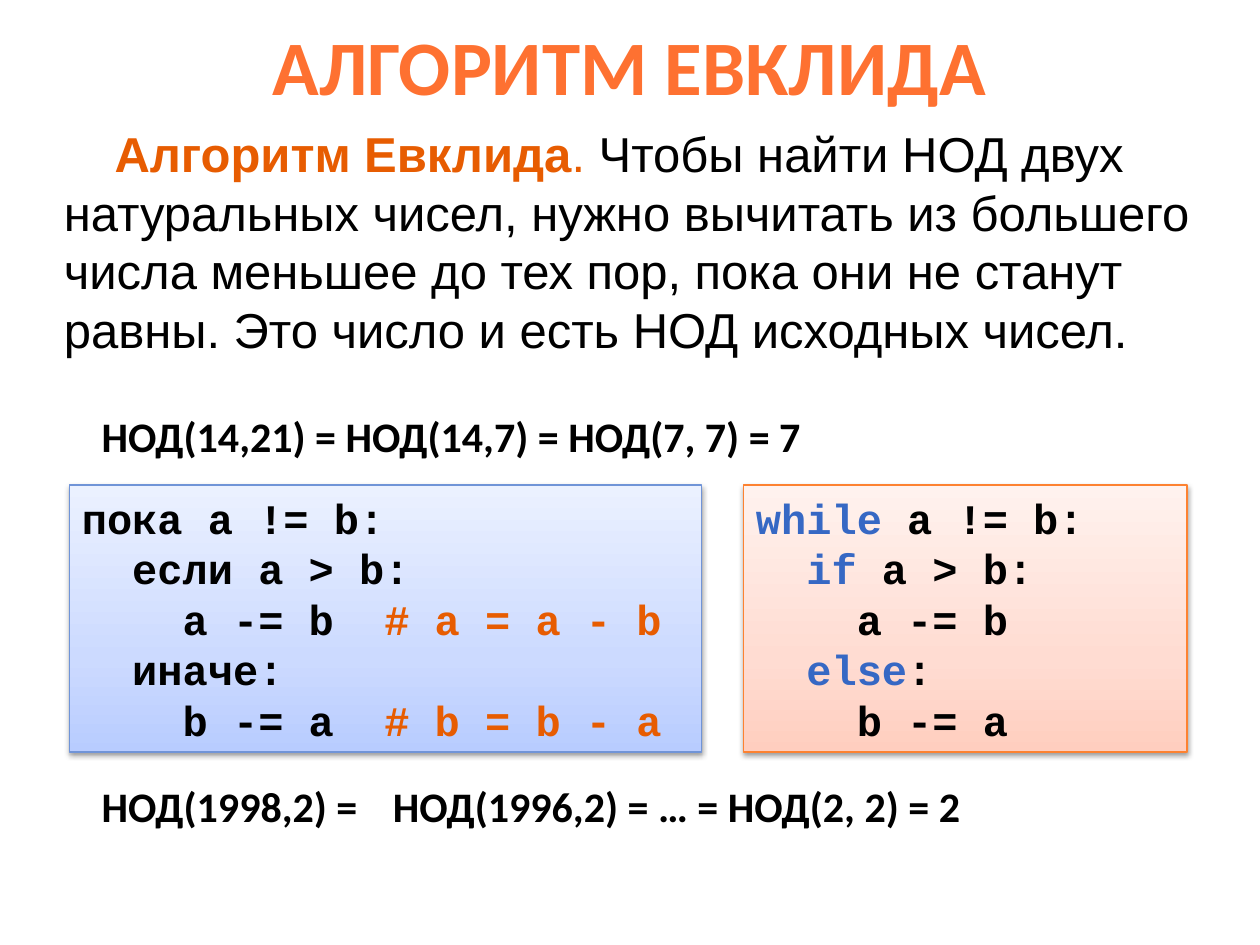
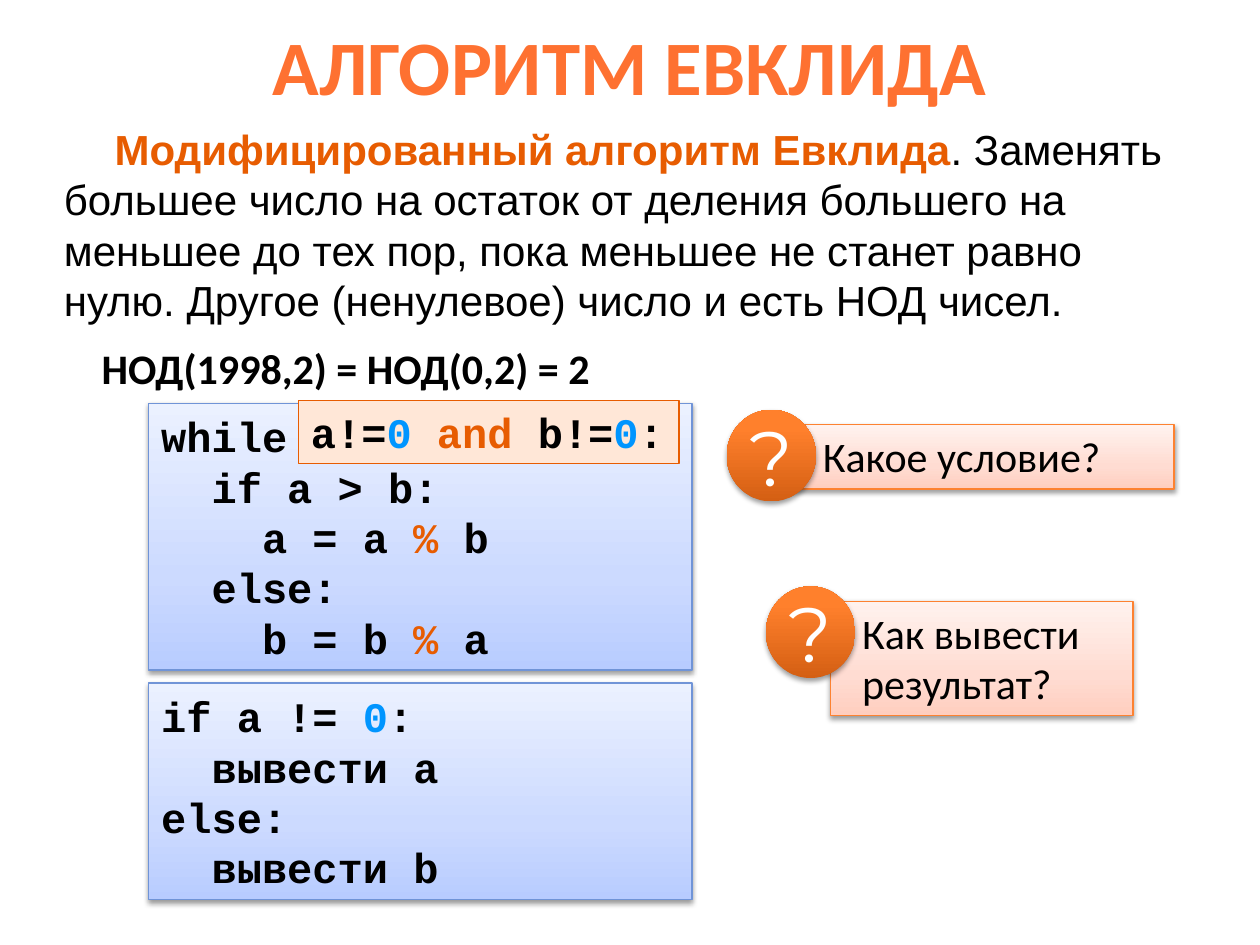
from dataclasses import dataclass

from lxml import etree
from pptx import Presentation
from pptx.dml import color as dml
from pptx.enum import shapes, text
from pptx.oxml import ns
from pptx import util as u


@dataclass(frozen=True)
class Theme:
    """Colours, gradients, fonts and type sizes shared by the slides."""
    title: str = "FE7131"
    ink: str = "000000"
    white: str = "FFFFFF"
    accent: str = "E75C01"
    keyword: str = "3668C4"
    number: str = "0095FF"
    peach: str = "FFE7D7"
    blue_line: str = "7094D7"
    orange_line: str = "FD8231"
    blue: tuple = ((0, "B8CCFF"), (35, "CCDAFF"), (100, "EBF1FF"))
    orange: tuple = ((0, "FFCEBF"), (35, "FFDCD2"), (100, "FFF2EE"))
    badge: tuple = ((0, "D45F13"), (80, "FF802C"), (100, "FF812E"))
    heading_font: str = "Calibri"
    body_font: str = "Arial"
    code_font: str = "Courier New"
    badge_font: str = "Montserrat"
    big: int = 44
    lead: int = 28
    normal: int = 24


THEME = Theme()
RECT, OVAL = shapes.MSO_SHAPE.RECTANGLE, shapes.MSO_SHAPE.OVAL
CENTER = text.PP_ALIGN.CENTER
LEFT = text.PP_ALIGN.LEFT


def rgb(value):
    """Turn a hex string into a colour."""
    return dml.RGBColor.from_string(value)


def accent(words):
    """Mark words with the accent colour."""
    return words, THEME.accent


def keyword(words):
    """Mark words as a code keyword."""
    return words, THEME.keyword


def number(words):
    """Mark words as a code number."""
    return words, THEME.number


def write(box, lines, font, size, bold=False, color=THEME.ink, align=LEFT, middle=False):
    """Fill a box with lines; each line is a string or a list of spans."""
    frame = box.text_frame
    frame.word_wrap = True
    frame.vertical_anchor = text.MSO_ANCHOR.MIDDLE if middle else text.MSO_ANCHOR.TOP
    for index, line in enumerate(lines):
        para = frame.add_paragraph() if index else frame.paragraphs[0]
        para.alignment = align
        para.font.name, para.font.size, para.font.bold = font, u.Pt(size), bold
        para.font.color.rgb = rgb(color)
        for part in [line] if isinstance(line, str) else line:
            words, tint = (part, None) if isinstance(part, str) else part
            span = para.add_run()
            span.text = words
            if tint:
                span.font.color.rgb = rgb(tint)
    return frame


def add_box(page, left, top, width, height):
    """Add an empty text box measured in centimetres."""
    return page.shapes.add_textbox(*map(u.Cm, (left, top, width, height)))


def add_panel(parent, kind, area, line=None):
    """Add a shape without shadow, outlined only when a line colour is given."""
    panel = parent.shapes.add_shape(kind, *map(u.Cm, area))
    panel.shadow.inherit = False
    if line:
        panel.line.color.rgb = rgb(line)
        panel.line.width = u.Pt(0.75)
    else:
        panel.line.fill.background()
    return panel


def add_raised(parent, kind, area, stops, line=None):
    """Add a shape with a vertical gradient and a soft shadow below."""
    panel = add_panel(parent, kind, area, line)
    panel.fill.gradient()
    panel.fill.gradient_angle = 90
    properties = panel._element.spPr
    stop_list = properties.find(ns.qn("a:gradFill")).find(ns.qn("a:gsLst"))
    for old in list(stop_list):
        stop_list.remove(old)
    for position, value in stops:
        stop = etree.SubElement(stop_list, ns.qn("a:gs"), pos=str(position * 1000))
        etree.SubElement(stop, ns.qn("a:srgbClr"), val=value)
    shadow = etree.SubElement(
        properties.find(ns.qn("a:effectLst")), ns.qn("a:outerShdw"),
        blurRad=str(u.Pt(3.1)), dist=str(u.Pt(1.6)), dir="5400000", rotWithShape="0")
    shade = etree.SubElement(shadow, ns.qn("a:srgbClr"), val="000000")
    etree.SubElement(shade, ns.qn("a:alpha"), val="38000")
    return panel


def add_page(deck):
    """Add a blank page with the shared title."""
    page = deck.slides.add_slide(deck.slide_layouts[6])
    write(add_box(page, 0, 0.23, 25.4, 2.16), ["АЛГОРИТМ ЕВКЛИДА"], THEME.heading_font,
          THEME.big, True, THEME.title, CENTER, True)
    return page


def add_definition(page, height, size, term, *rest):
    """Add a definition that opens with a bold accented term."""
    box = add_box(page, 1.04, 2.36, 23.47, height)
    frame = write(box, [[accent(term), *rest]], THEME.body_font, size)
    para = frame.paragraphs[0]
    para.runs[0].font.bold = True
    para._p.get_or_add_pPr().set("indent", str(u.Cm(1.02)))


def add_formula(page, left, top, width, words):
    """Add a bold line of calculation."""
    write(add_box(page, left, top, width, 1.3), [words], THEME.heading_font, THEME.normal, True)


def add_code(page, area, lines, stops=THEME.blue, line=THEME.blue_line):
    """Add a raised panel of code."""
    panel = add_raised(page, RECT, area, stops, line)
    write(panel, lines, THEME.code_font, THEME.normal, True, middle=True)


def add_condition(page, area, spans):
    """Add the flat label that holds the loop condition."""
    panel = add_panel(page, RECT, area, THEME.accent)
    panel.fill.solid()
    panel.fill.fore_color.rgb = rgb(THEME.peach)
    write(panel, [spans], THEME.code_font, THEME.normal, True).word_wrap = False


def add_question(page, left, top, width, height, words):
    """Add a question panel with a round badge at its corner."""
    group = page.shapes.add_group_shape()
    panel = add_raised(group, RECT, (left, top, width, height), THEME.orange, THEME.orange_line)
    write(panel, [words], THEME.heading_font, THEME.normal).margin_left = u.Cm(0.64)
    badge = add_raised(group, OVAL, (left - 1.3, top - 0.3, 1.8, 1.85), THEME.badge)
    frame = write(badge, ["?"], THEME.badge_font, THEME.big, False, THEME.white, CENTER, True)
    frame.margin_left = frame.margin_right = frame.margin_top = frame.margin_bottom = 0
    frame.word_wrap = False


def build_subtraction(deck):
    """Build the page on repeated subtraction."""
    page = add_page(deck)
    add_definition(
        page, 5.05, THEME.lead, "Алгоритм Евклида", accent(". "),
        "Чтобы найти НОД двух натуральных чисел, нужно вычитать из большего числа "
        "меньшее до тех пор, пока они не станут равны. Это число и есть НОД исходных чисел.")
    add_formula(page, 1.8, 8.15, 16.74, "НОД(14,21) = НОД(14,7) = НОД(7, 7) = 7")
    add_code(page, (1.4, 9.78, 12.75, 5.38), [
        "пока a != b:",
        "  если a > b:",
        ["    a -= b  ", accent("# a = a - b")],
        "  иначе:",
        ["    b -= a  ", accent("# b = b - a")],
    ])
    add_code(page, (14.99, 9.78, 8.94, 5.38), [
        [keyword("while "), "a != b:"],
        ["  ", keyword("if "), "a > b:"],
        "    a -= b",
        ["  ", keyword("else"), ":"],
        "    b -= a",
    ], THEME.orange, THEME.orange_line)
    add_formula(page, 1.8, 15.6, 6.55, "НОД(1998,2) =")
    add_formula(page, 7.67, 15.6, 13.94, "НОД(1996,2) = … = НОД(2, 2) = 2")


def build_remainder(deck):
    """Build the page on the remainder method."""
    page = add_page(deck)
    add_definition(
        page, 4.37, THEME.normal, "Модифицированный алгоритм Евклида",
        ". Заменять большее число на остаток от деления большего на меньшее до тех пор, "
        "пока меньшее не станет равно нулю. Другое (ненулевое) число и есть НОД чисел.")
    add_formula(page, 1.8, 6.78, 11.81, "НОД(1998,2) = НОД(0,2) = 2")
    add_code(page, (3, 8.13, 10.95, 5.38), [
        "while",
        "  if a > b:",
        ["    a = a ", accent("%"), " b"],
        "  else:",
        ["    b = b ", accent("%"), " a"],
    ])
    add_question(page, 15.95, 8.56, 7.72, 1.3, "Какое условие?")
    add_condition(page, (6.02, 8.08, 7.67, 1.27),
                  ["a!=", number("0 "), accent("and"), " b!=", number("0"), ":"])
    add_question(page, 16.74, 12.12, 6.1, 2.31, "Как вывести результат?")
    add_code(page, (3, 13.77, 10.95, 4.37), [
        ["if a != ", number("0"), ":"],
        "  вывести a",
        "else:",
        "  вывести b",
    ])


def main():
    """Build and save the deck."""
    deck = Presentation()
    deck.slide_width, deck.slide_height = u.Cm(25.4), u.Cm(19.05)
    build_subtraction(deck)
    build_remainder(deck)
    deck.save("out.pptx")


if __name__ == "__main__":
    main()
